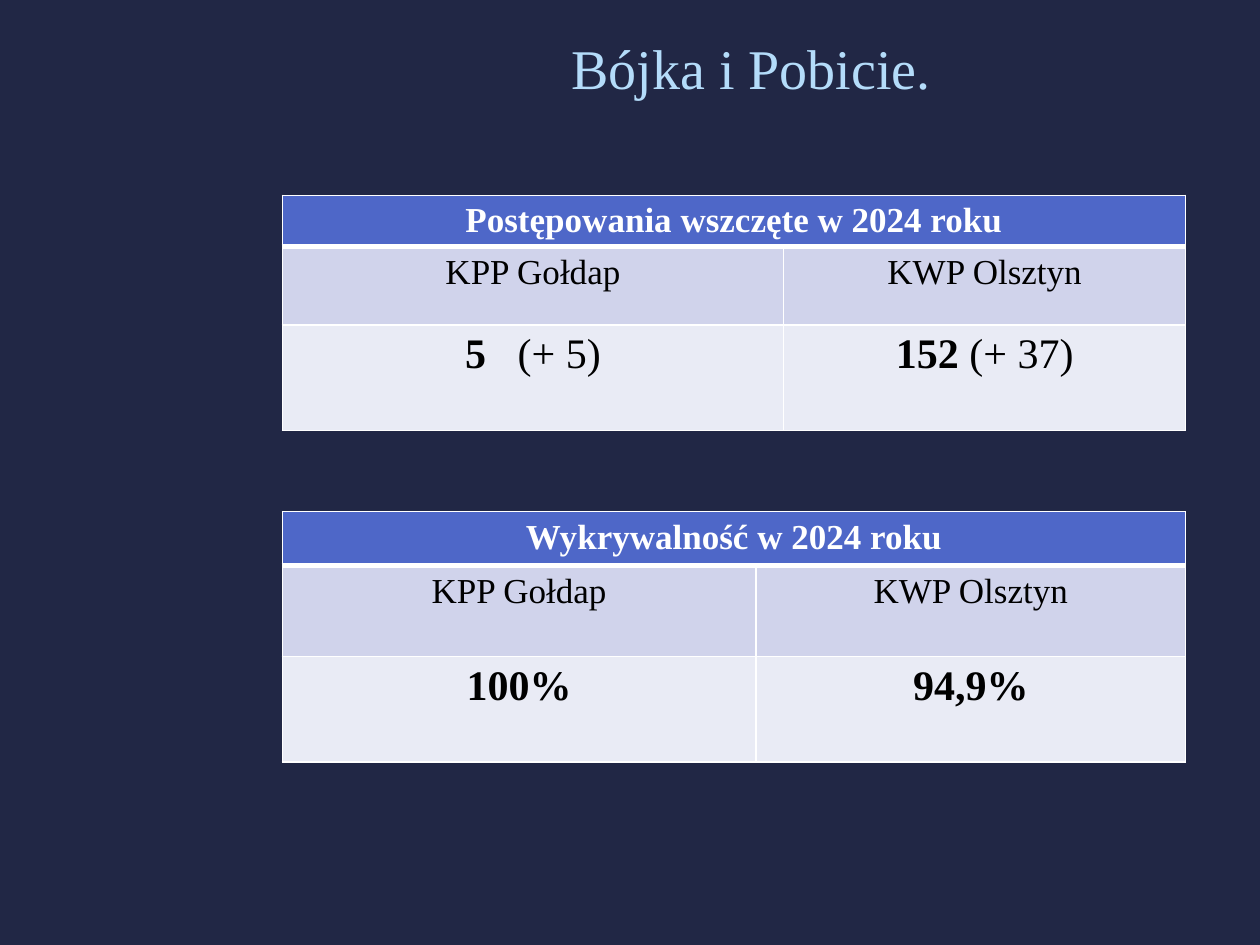
"""Build the slide on fights and assaults with its two statistics tables."""
import pptx
import pptx.dml.color
import pptx.enum.text
import pptx.oxml
import pptx.oxml.ns
import pptx.util
from pptx.util import Inches

FONT = "Times New Roman"
TITLE = "Bójka i Pobicie."
UNITS = [[("KPP Gołdap", False, 0)], [("KWP Olsztyn", False, 0)]]
STATISTICS = [
    {
        "heading": "Postępowania wszczęte w 2024 roku",
        "values": [
            [("5", True, 0), (" ", True, 12), ("(+ 5)", False, 0)],
            [("152", True, 0), (" (+ 37)", False, 0)],
        ],
        "top": 1.55,
        "widths": [3.98, 3.19],
        "heights": [0.4, 0.62, 0.84],
    },
    {
        "heading": "Wykrywalność w 2024 roku",
        "values": [[("100%", True, 0)], [("94,9%", True, 0)]],
        "top": 4.06,
        "widths": [3.76, 3.41],
        "heights": [0.43, 0.72, 0.84],
    },
]
TABLE_LEFT = 2.24
ROW_STYLES = [
    {"fill": "4E67C8", "size": 20, "color": "FFFFFF", "top": 1, "bottom": 3},
    {"fill": "D0D3EB", "size": 20, "color": "000000", "top": 3, "bottom": 1},
    {"fill": "E9EBF5", "size": 24, "color": "000000", "top": 1, "bottom": 1},
]


def paint(fill, color):
    fill.solid()
    fill.fore_color.rgb = pptx.dml.color.RGBColor.from_string(color)


def write(frame, runs, size, color):
    paragraph = frame.paragraphs[0]
    paragraph.alignment = pptx.enum.text.PP_ALIGN.CENTER
    for text, bold, spacing in runs:
        run = paragraph.add_run()
        run.text = text
        run.font.name = FONT
        run.font.size = pptx.util.Pt(size)
        run.font.bold = bold
        paint(run.font.fill, color)
        if spacing:
            run.font._element.set("spc", str(spacing * 100))


def set_borders(cell, top, bottom):
    properties = cell._tc.get_or_add_tcPr()
    sides = [("L", 1), ("R", 1), ("T", top), ("B", bottom)]
    for position, (side, width) in enumerate(sides):
        properties.insert(position, pptx.oxml.parse_xml(
            f'<a:ln{side} {pptx.oxml.ns.nsdecls("a")} w="{width * 12700}">'
            '<a:solidFill><a:srgbClr val="FFFFFF"/></a:solidFill>'
            f'</a:ln{side}>'))


def add_statistics(slide, statistics):
    widths, heights = statistics["widths"], statistics["heights"]
    table = slide.shapes.add_table(
        len(heights), len(widths), Inches(TABLE_LEFT), Inches(statistics["top"]),
        Inches(sum(widths)), Inches(sum(heights))).table
    for column, width in zip(table.columns, widths):
        column.width = Inches(width)
    for row, height in zip(table.rows, heights):
        row.height = Inches(height)
    table.cell(0, 0).merge(table.cell(0, len(widths) - 1))
    contents = [[[(statistics["heading"], True, 0)], []], UNITS, statistics["values"]]
    for row, cells, style in zip(table.rows, contents, ROW_STYLES):
        for cell, runs in zip(row.cells, cells):
            paint(cell.fill, style["fill"])
            set_borders(cell, style["top"], style["bottom"])
            write(cell.text_frame, runs, style["size"], style["color"])


def main():
    presentation = pptx.Presentation()
    presentation.slide_width = Inches(10)
    presentation.slide_height = Inches(7.5)
    slide = presentation.slides.add_slide(presentation.slide_layouts[6])
    paint(slide.background.fill, "212745")
    for statistics in STATISTICS:
        add_statistics(slide, statistics)
    title = slide.shapes.add_textbox(
        Inches(1.93), Inches(0), Inches(8.07), Inches(1.07)).text_frame
    title.word_wrap = True
    title.vertical_anchor = pptx.enum.text.MSO_ANCHOR.MIDDLE
    write(title, [(TITLE, False, 0)], 32, "B4DCFA")
    presentation.save("out.pptx")


if __name__ == "__main__":
    main()
